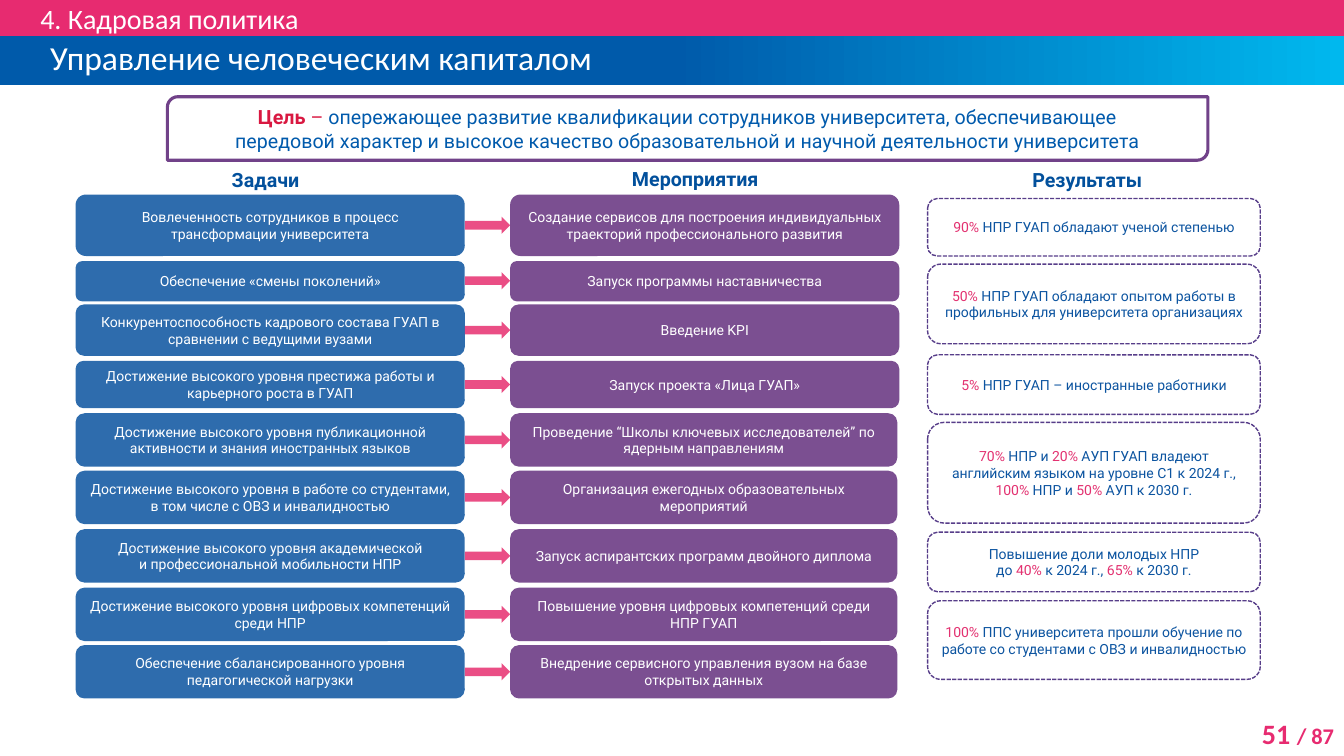
from dataclasses import dataclass
from copy import deepcopy

from lxml import etree
from pptx import Presentation
from pptx.dml.color import RGBColor
from pptx.enum.dml import MSO_LINE
from pptx.enum.shapes import MSO_SHAPE
from pptx.enum.text import MSO_ANCHOR, PP_ALIGN
from pptx.oxml.ns import qn
from pptx.util import Emu, Pt

LEFT, CENTER, RIGHT = PP_ALIGN.LEFT, PP_ALIGN.CENTER, PP_ALIGN.RIGHT
TOP, MIDDLE = MSO_ANCHOR.TOP, MSO_ANCHOR.MIDDLE
RECTANGLE, ROUNDED = MSO_SHAPE.RECTANGLE, MSO_SHAPE.ROUNDED_RECTANGLE
DIAGONAL, ARROW = MSO_SHAPE.ROUND_2_DIAG_RECTANGLE, MSO_SHAPE.RIGHT_ARROW
DASH = MSO_LINE.SQUARE_DOT

EMU_PER_PX = 9144  # 100 px to the inch
PINK, WHITE, NAVY, PURPLE = "E72B70", "FFFFFF", "0C54A0", "714289"
BLUE, CYAN, HEADING = "005AAA", "00B8EE", "02509C"
RESULT_ACCENT, RESULT_LINE, ARROW_PINK = "E33271", "573D89", "E73271"
GOAL_RED, GOAL_BLUE = "D91841", "005AAC"

TASK_LEFT, MEASURE_LEFT, RESULT_LEFT = 75, 506, 920
TASK_WIDTH, RESULT_WIDTH, ARROW_HEIGHT = 386, 330, 17


@dataclass(frozen=True)
class Run:
    text: str
    color: str = WHITE
    size: float = 10
    bold: bool = False


@dataclass(frozen=True)
class Row:
    top: int
    height: int
    task: str
    measure: str
    measure_width: int = 384


@dataclass(frozen=True)
class Result:
    top: int
    height: int
    text: str


@dataclass(frozen=True)
class Heading:
    left: int
    top: int
    width: int
    text: str


ROWS = [
    Row(193, 61, "Вовлеченность сотрудников в процесс трансформации университета",
        "Создание сервисов для построения индивидуальных траекторий профессионального развития", 386),
    Row(259, 40, "Обеспечение «смены поколений»", "Запуск программы наставничества", 386),
    Row(302, 51, "Конкурентоспособность кадрового состава ГУАП в сравнении с ведущими вузами",
        "Введение KPI", 386),
    Row(358, 47, "Достижение высокого уровня престижа работы и карьерного роста в ГУАП",
        "Запуск проекта «Лица ГУАП»", 386),
    Row(410, 53, "Достижение высокого уровня публикационной активности и знания иностранных языков",
        "Проведение “Школы ключевых исследователей” по ядерным направлениям"),
    Row(467, 53, "Достижение высокого уровня в работе со студентами, в том числе с ОВЗ и инвалидностью",
        "Организация ежегодных образовательных мероприятий"),
    Row(525, 53, "Достижение высокого уровня академической\nи профессиональной мобильности НПР",
        "Запуск аспирантских программ двойного диплома"),
    Row(583, 53, "Достижение высокого уровня цифровых компетенций среди НПР",
        "Повышение уровня цифровых компетенций среди НПР ГУАП"),
    Row(640, 53, "Обеспечение сбалансированного уровня педагогической нагрузки",
        "Внедрение сервисного управления вузом на базе открытых данных"),
]

# Asterisks enclose the highlighted figures.
RESULTS = [
    Result(197, 57, "*90% *НПР ГУАП обладают ученой степенью"),
    Result(262, 79, "*50% *НПР ГУАП обладают опытом работы в профильных для университета организациях"),
    Result(352, 59, "*5% *НПР ГУАП – иностранные работники"),
    Result(419, 100, "*70% *НПР и *20% *АУП ГУАП владеют английским языком на уровне C1 к 2024 г., "
                     "*100% *НПР и *50% *АУП к 2030 г."),
    Result(528, 59, "Повышение доли молодых НПР\nдо *40% *к 2024 г., *65% *к 2030 г."),
    Result(596, 78, "*100% *ППС университета прошли обучение по работе со студентами с ОВЗ и инвалидностью"),
]

HEADINGS = [
    Heading(220, 162, 88, "Задачи"),
    Heading(617, 161, 147, "Мероприятия"),
    Heading(1014, 162, 133, "Результаты"),
]


def px(value: int) -> Emu:
    return Emu(value * EMU_PER_PX)


def rgb(color: str) -> RGBColor:
    return RGBColor.from_string(color)


def marked_runs(text: str, color: str = WHITE, accent: str = WHITE) -> list[list[Run]]:
    """Split text into paragraphs of runs, colouring the parts between asterisks."""
    return [
        [Run(part, accent if index % 2 else color)
         for index, part in enumerate(line.split("*")) if part]
        for line in text.split("\n")
    ]


def write_text(shape, paragraphs: list[list[Run]], *, font="Roboto", align=CENTER,
               anchor=MIDDLE, wrap=True, side_inset=10, edge_inset=5, indent=0,
               line_spacing=None) -> None:
    frame = shape.text_frame
    frame.word_wrap = wrap
    frame.vertical_anchor = anchor
    frame.margin_left = frame.margin_right = px(side_inset)
    frame.margin_top = frame.margin_bottom = px(edge_inset)
    for index, runs in enumerate(paragraphs):
        paragraph = frame.add_paragraph() if index else frame.paragraphs[0]
        paragraph.alignment = align
        if indent:
            properties = paragraph._p.get_or_add_pPr()
            properties.set("marL", str(px(indent)))
            properties.set("indent", "0")
        if line_spacing:
            paragraph.line_spacing = Pt(line_spacing)
        for item in runs:
            run = paragraph.add_run()
            run.text = item.text
            run.font.name = font
            run.font.size = Pt(item.size)
            run.font.bold = item.bold
            run.font.color.rgb = rgb(item.color)


def add_box(slide, kind, left: int, top: int, width: int, height: int, *,
            fill=None, opacity=100, line=None, line_width=1.0, dash=None):
    shape = slide.shapes.add_shape(kind, px(left), px(top), px(width), px(height))
    shape.shadow.inherit = False
    if fill:
        shape.fill.solid()
        shape.fill.fore_color.rgb = rgb(fill)
        if opacity < 100:
            color = shape.element.spPr.find(qn("a:solidFill"))[0]
            etree.SubElement(color, qn("a:alpha")).set("val", str(opacity * 1000))
    else:
        shape.fill.background()
    if line:
        shape.line.color.rgb = rgb(line)
        shape.line.width = Pt(line_width)
        if dash:
            shape.line.dash_style = dash
    else:
        shape.line.fill.background()
    return shape


def add_text_box(slide, left: int, top: int, width: int, height: int):
    return slide.shapes.add_textbox(px(left), px(top), px(width), px(height))


def fill_title_gradient(shape) -> None:
    """Hold blue to the middle, then fade to cyan."""
    shape.fill.gradient()
    shape.fill.gradient_angle = 0
    first, last = shape.fill.gradient_stops
    first.color.rgb, last.color.rgb = rgb(BLUE), rgb(CYAN)
    stops = shape.element.spPr.find(qn("a:gradFill")).find(qn("a:gsLst"))
    middle = deepcopy(stops[0])
    middle.set("pos", "50000")
    stops.insert(1, middle)


def draw_header(slide) -> None:
    section = add_box(slide, RECTANGLE, 0, 0, 1333, 36, fill=PINK)
    write_text(section, [[Run("4. Кадровая политика", size=20)]], font="Calibri",
               align=LEFT, side_inset=0, edge_inset=0, indent=40)
    title = add_box(slide, RECTANGLE, 0, 36, 1333, 48)
    fill_title_gradient(title)
    write_text(title, [[Run("Управление человеческим капиталом", size=24)]], font="Calibri",
               align=LEFT, edge_inset=0, indent=40, line_spacing=24)


def draw_goal(slide) -> None:
    goal = add_box(slide, DIAGONAL, 166, 96, 1032, 63, line=PURPLE, line_width=2.25)
    write_text(goal, [
        [Run("Цель ", GOAL_RED, 14, True), Run("– ", GOAL_RED, 14),
         Run("опережающее развитие квалификации сотрудников университета, обеспечивающее", GOAL_BLUE, 14)],
        [Run("передовой характер и высокое качество образовательной и научной деятельности университета",
             GOAL_BLUE, 14)],
    ])


def draw_row(slide, row: Row) -> None:
    task = add_box(slide, ROUNDED, TASK_LEFT, row.top, TASK_WIDTH, row.height, fill=NAVY, opacity=86)
    write_text(task, marked_runs(row.task))
    measure = add_box(slide, ROUNDED, MEASURE_LEFT, row.top, row.measure_width, row.height,
                      fill=PURPLE, opacity=93)
    write_text(measure, marked_runs(row.measure))
    arrow_left = TASK_LEFT + TASK_WIDTH
    add_box(slide, ARROW, arrow_left, row.top + (row.height - ARROW_HEIGHT) // 2,
            MEASURE_LEFT - arrow_left, ARROW_HEIGHT, fill=ARROW_PINK, opacity=86)


def main() -> None:
    presentation = Presentation()
    presentation.slide_width, presentation.slide_height = px(1333), px(750)
    slide = presentation.slides.add_slide(presentation.slide_layouts[6])
    draw_header(slide)
    draw_goal(slide)
    for heading in HEADINGS:
        box = add_text_box(slide, heading.left, heading.top, heading.width, 34)
        write_text(box, [[Run(heading.text, HEADING, 14, True)]], align=LEFT, anchor=TOP, wrap=False)
    for row in ROWS:
        draw_row(slide, row)
    for result in RESULTS:
        box = add_box(slide, ROUNDED, RESULT_LEFT, result.top, RESULT_WIDTH, result.height,
                      line=RESULT_LINE, dash=DASH)
        write_text(box, marked_runs(result.text, NAVY, RESULT_ACCENT))
    page_number = add_text_box(slide, 1213, 706, 120, 44)
    write_text(page_number, [[Run("51 ", PINK, 20, True), Run("/ 87", PINK, 16, True)]],
               font="Calibri", align=RIGHT, anchor=TOP)
    presentation.save("out.pptx")


if __name__ == "__main__":
    main()
